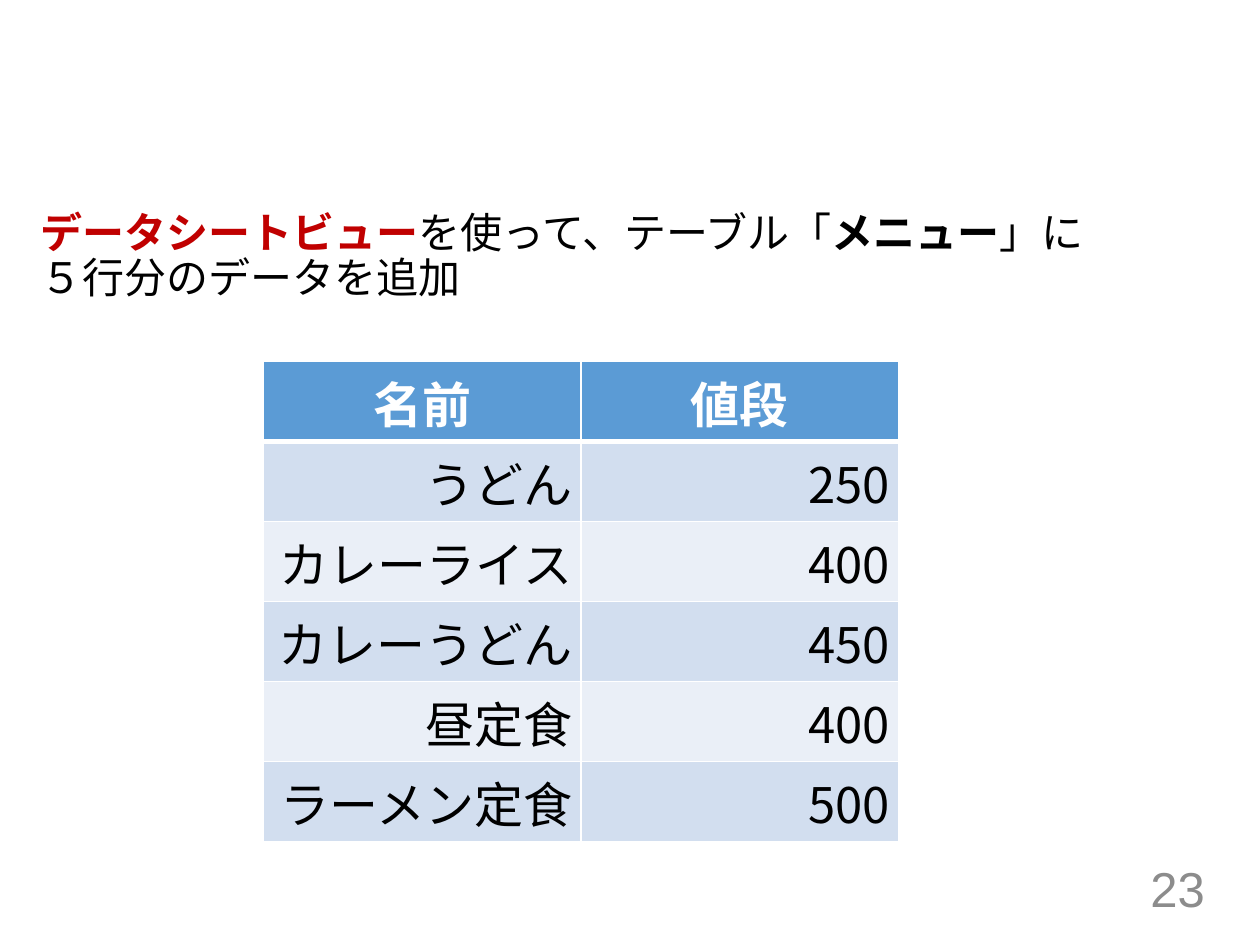
"""Build the slide on adding five rows to the menu table in datasheet view."""
from lxml.etree import SubElement
from pptx import Presentation
from pptx.dml.color import RGBColor
from pptx.enum.text import MSO_ANCHOR, PP_ALIGN
from pptx.oxml import parse_xml
from pptx.oxml.ns import nsdecls, qn
from pptx.util import Inches, Pt

BLACK = RGBColor(0x00, 0x00, 0x00)
WHITE = RGBColor(0xFF, 0xFF, 0xFF)
RED = RGBColor(0xC0, 0x00, 0x00)
GRAY = RGBColor(0x8C, 0x8C, 0x8C)
HEADER_BLUE = RGBColor(0x5B, 0x9B, 0xD5)
BANDS = [RGBColor(0xEA, 0xEF, 0xF7), RGBColor(0xD2, 0xDE, 0xEF)]
JAPANESE = "Noto Sans CJK JP"
PAD_X, PAD_Y = Inches(0.07), Inches(0.04)

MENU = [
    ("名前", "値段"),
    ("うどん", "250"),
    ("カレーライス", "400"),
    ("カレーうどん", "450"),
    ("昼定食", "400"),
    ("ラーメン定食", "500"),
]
INSTRUCTION = [
    ("データシートビュー", RED, True),
    ("を使って、テーブル「", BLACK, False),
    ("メニュー", BLACK, True),
    ("」に５行分のデータを追加", BLACK, False),
]


def style(run, size, color, bold=False, typeface=JAPANESE):
    font = run.font
    font.size, font.bold, font.name = Pt(size), bold, typeface
    font.color.rgb = color
    SubElement(run._r.get_or_add_rPr(), qn("a:ea")).set("typeface", typeface)


def add_text_area(left, top, width, height):
    area = slide.shapes.add_textbox(*map(Inches, (left, top, width, height)))
    area.text_frame.word_wrap = True
    return area.text_frame


deck = Presentation()
deck.slide_width, deck.slide_height = Inches(10), Inches(7.5)
slide = deck.slides.add_slide(deck.slide_layouts[6])

page_number = add_text_area(7.41, 6.9, 2.25, 0.3)
page_number.vertical_anchor = MSO_ANCHOR.MIDDLE
page_number.text = "23"
page_number.paragraphs[0].alignment = PP_ALIGN.RIGHT
style(page_number.paragraphs[0].runs[0], 28, GRAY, typeface="Arial")

instruction = add_text_area(0.25, 1.64, 8.57, 1.09)
instruction.margin_left = instruction.margin_right = PAD_X
instruction.margin_top = instruction.margin_bottom = PAD_Y
sentence = instruction.paragraphs[0]
sentence.line_spacing = 0.9
sentence.space_before = Pt(10)
for words, color, bold in INSTRUCTION:
    run = sentence.add_run()
    run.text = words
    style(run, 24, color, bold)

menu = slide.shapes.add_table(
    len(MENU), 2, Inches(2.09), Inches(2.87), Inches(5.04), Inches(3.81)).table
for row_index, entry in enumerate(MENU):
    is_header = row_index == 0
    for column_index, words in enumerate(entry):
        cell = menu.cell(row_index, column_index)
        cell.margin_left = cell.margin_right = PAD_X
        cell.margin_top = cell.margin_bottom = PAD_Y
        cell.text = words
        label = cell.text_frame.paragraphs[0]
        label.alignment = PP_ALIGN.CENTER if is_header else PP_ALIGN.RIGHT
        style(label.runs[0], 28, WHITE if is_header else BLACK, is_header)
        cell.fill.solid()
        cell.fill.fore_color.rgb = HEADER_BLUE if is_header else BANDS[row_index % 2]
        for position, side in enumerate("LRTB"):
            heavy = (side == "B" and is_header) or (side == "T" and row_index == 1)
            border = parse_xml(
                f'<a:ln{side} {nsdecls("a")} w="{Pt(3 if heavy else 1)}">'
                f'<a:solidFill><a:srgbClr val="{WHITE}"/></a:solidFill></a:ln{side}>')
            cell._tc.get_or_add_tcPr().insert(position, border)

deck.save("out.pptx")
